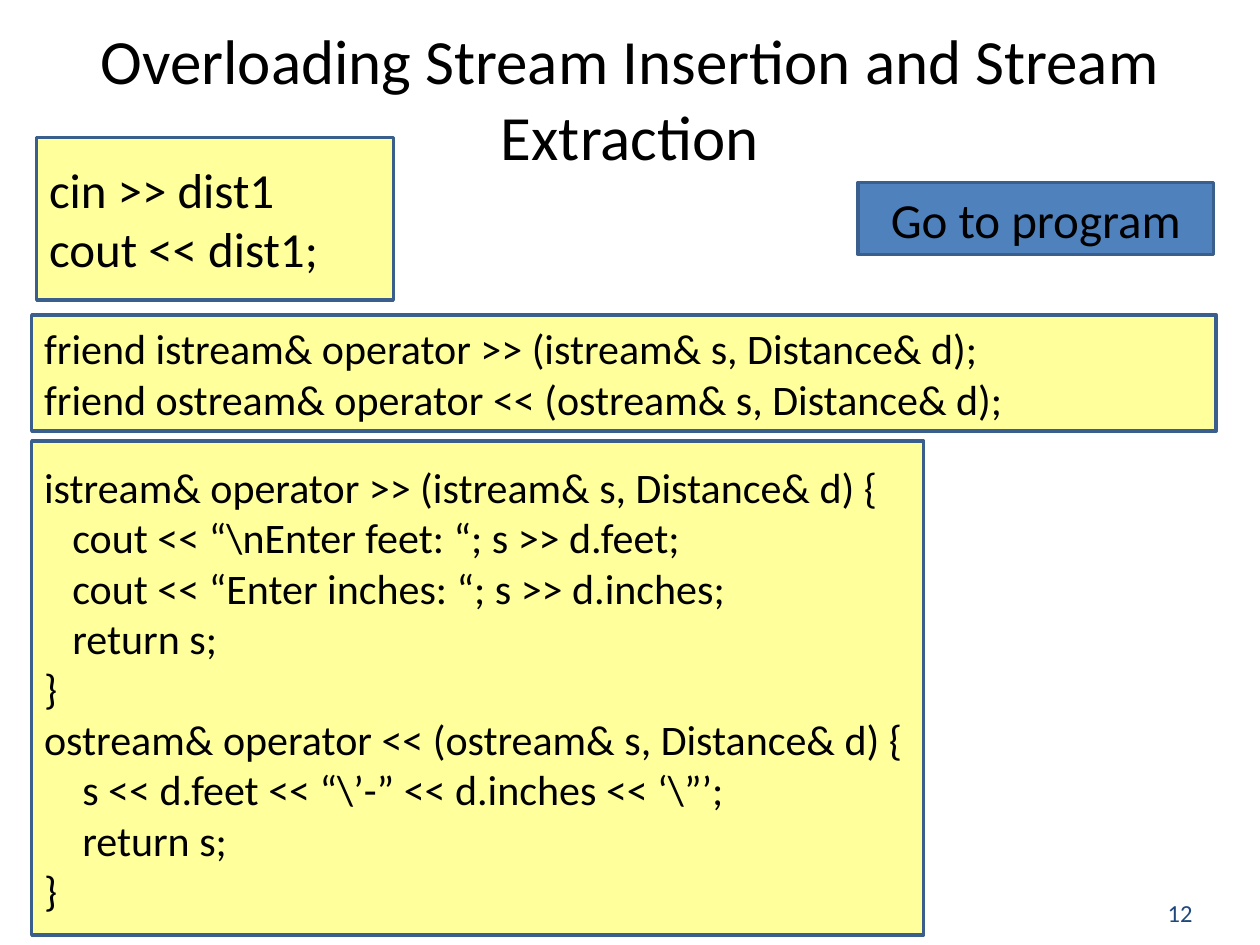
from lxml.etree import SubElement
from pptx import Presentation
from pptx.dml.color import RGBColor
from pptx.enum.shapes import MSO_SHAPE
from pptx.enum.text import MSO_ANCHOR, MSO_AUTO_SIZE, PP_ALIGN
from pptx.oxml.ns import qn
from pptx.util import Cm, Pt

COLORS = {
    "text": "000000",
    "code": "FFFF00",
    "button": "4F81BD",
    "border": "3A5F8C",
    "number": "1F497D",
}
FONT = "Calibri"
CODE_OPACITY = 39

TITLE = "Overloading Stream Insertion and Stream Extraction"
TITLE_AREA = (1.27, 0.97, 22.86, 1.98)
PAGE_NUMBER = "12"
NUMBER_AREA = (23.29, 17.98, 1.7, 0.84)

DEFINITIONS = [
    ("istream& operator >> (istream& s, Distance& d) {", 0),
    ("cout << “\\nEnter feet: “; s >> d.feet;", 0.57),
    ("cout << “Enter inches: “; s >> d.inches;", 0.57),
    ("return s;", 0.57),
    ("}", 0),
    ("ostream& operator << (ostream& s, Distance& d) {", 0),
    ("s << d.feet << “\\’-” << d.inches << ‘\\”’;", 0.77),
    ("return s;", 0.77),
    ("}", 0),
]
USAGE = [("cin >> dist1", 0), ("cout << dist1;", 0)]
DECLARATIONS = [
    ("friend istream& operator >> (istream& s, Distance& d);", 0),
    ("friend ostream& operator << (ostream& s, Distance& d);", 0),
]
CODE_BOXES = [
    (DEFINITIONS, (0.64, 8.89, 17.98, 9.96), 24),
    (USAGE, (0.74, 2.77, 7.19, 3.28), 28),
    (DECLARATIONS, (0.64, 6.35, 23.88, 2.34), 24),
]
BUTTON = [("Go to program", 0)]
BUTTON_AREA = (17.3, 3.68, 7.16, 1.45)


def color(name):
    return RGBColor.from_string(COLORS[name])


def write(shape, lines, size, align=PP_ALIGN.LEFT, ink="text"):
    frame = shape.text_frame
    frame.word_wrap = True
    frame.auto_size = MSO_AUTO_SIZE.NONE
    frame.vertical_anchor = MSO_ANCHOR.MIDDLE
    frame.text = "\n".join(text for text, indent in lines)
    for para, (text, indent) in zip(frame.paragraphs, lines):
        para.alignment = align
        para.font.name = FONT
        para.font.size = Pt(size)
        para.font.color.rgb = color(ink)
        if indent:
            para._p.get_or_add_pPr().set("marL", str(Cm(indent)))


def add_box(page, area, fill):
    box = page.shapes.add_shape(MSO_SHAPE.RECTANGLE, *map(Cm, area))
    box.shadow.inherit = False
    box.fill.solid()
    box.fill.fore_color.rgb = color(fill)
    box.line.color.rgb = color("border")
    box.line.width = Pt(2)
    return box


def set_opacity(box, percent):
    fill_color = box._element.spPr.find(qn("a:solidFill")).find(qn("a:srgbClr"))
    SubElement(fill_color, qn("a:alpha")).set("val", str(percent * 1000))


def main():
    deck = Presentation()
    deck.slide_width, deck.slide_height = Cm(25.4), Cm(19.05)
    page = deck.slides.add_slide(deck.slide_layouts[5])

    title = page.shapes.title
    title.left, title.top, title.width, title.height = map(Cm, TITLE_AREA)
    write(title, [(TITLE, 0)], 36, PP_ALIGN.CENTER)

    number = page.shapes.add_textbox(*map(Cm, NUMBER_AREA))
    write(number, [(PAGE_NUMBER, 0)], 14, ink="number")

    for lines, area, size in CODE_BOXES:
        box = add_box(page, area, "code")
        set_opacity(box, CODE_OPACITY)
        write(box, lines, size)

    write(add_box(page, BUTTON_AREA, "button"), BUTTON, 28, PP_ALIGN.CENTER)

    deck.save("out.pptx")


if __name__ == "__main__":
    main()
